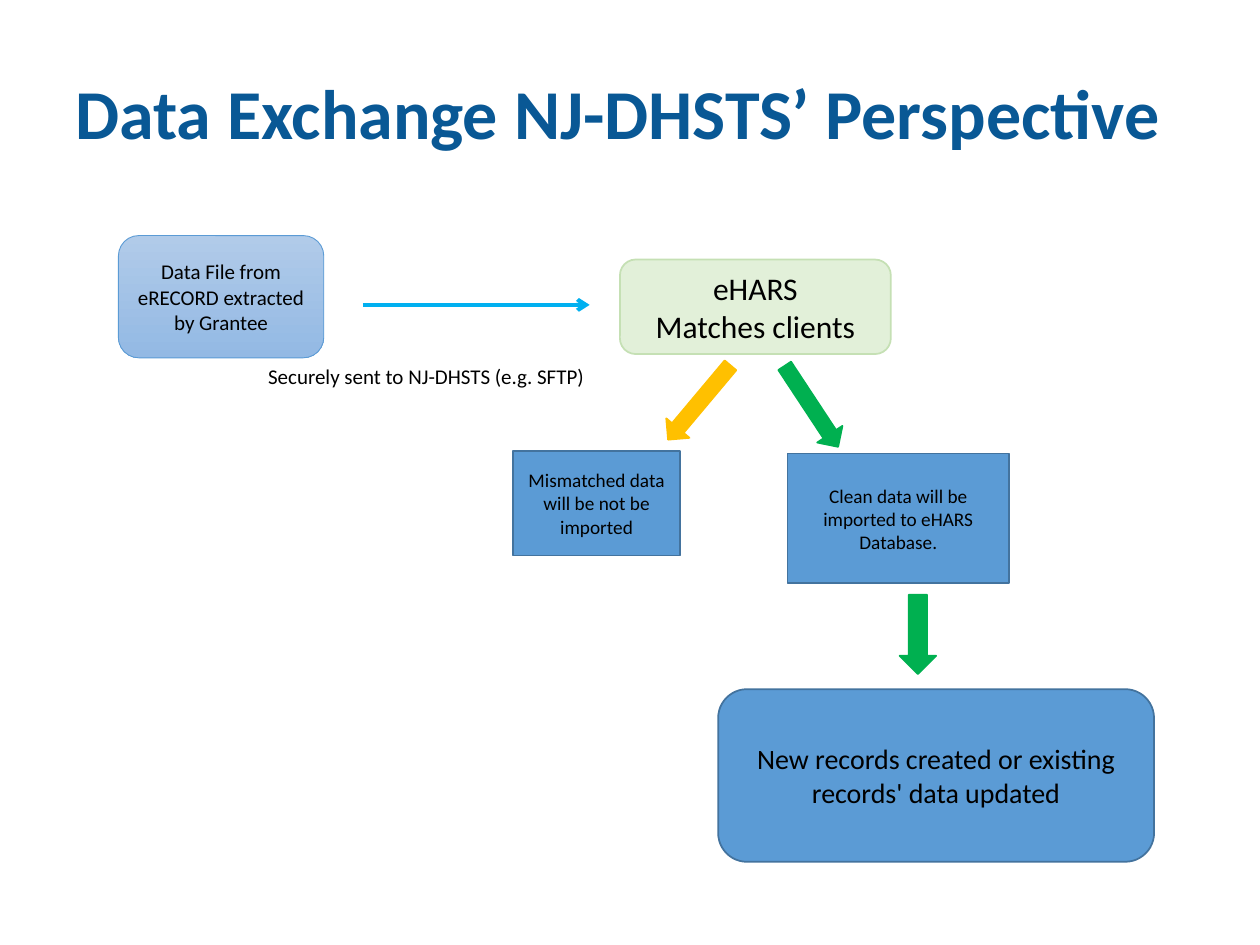
from lxml import etree
from pptx import Presentation
from pptx.dml.color import RGBColor
from pptx.enum import shapes, text
from pptx.oxml.ns import qn
from pptx.util import Inches, Pt

NAVY = RGBColor(0x09, 0x58, 0x95)
BLACK = RGBColor(0, 0, 0)
BLUE = RGBColor(0x5B, 0x9B, 0xD5)
BLUE_EDGE = RGBColor(0x43, 0x73, 0x9E)
PALE_TOP = RGBColor(0xB1, 0xCB, 0xE9)
PALE_BOTTOM = RGBColor(0x93, 0xB9, 0xE4)
MINT = RGBColor(0xE2, 0xF0, 0xD9)
MINT_EDGE = RGBColor(0xC5, 0xE0, 0xB4)
SKY = RGBColor(0x00, 0xB0, 0xF0)
AMBER = RGBColor(0xFF, 0xC0, 0x00)
GREEN = RGBColor(0x00, 0xB0, 0x50)

MSO = shapes.MSO_SHAPE
ALIGN = text.PP_ALIGN


def write(sp, lines, size, color=BLACK, bold=False, align=ALIGN.CENTER,
          anchor=text.MSO_ANCHOR.MIDDLE, wrap=True):
    tf = sp.text_frame
    tf.word_wrap = wrap
    tf.vertical_anchor = anchor
    for i, line in enumerate(lines):
        p = tf.add_paragraph() if i else tf.paragraphs[0]
        p.alignment = align
        r = p.add_run()
        r.text = line
        r.font.name = "Calibri"
        r.font.size = Pt(size)
        r.font.bold = bold
        r.font.color.rgb = color


def add_block(kind, box, fill, edge, width=1):
    sp = s.shapes.add_shape(kind, *map(Inches, box))
    sp.shadow.inherit = False
    sp.fill.solid()
    sp.fill.fore_color.rgb = fill
    sp.line.color.rgb = edge
    sp.line.width = Pt(width)
    return sp


prs = Presentation()
prs.slide_width, prs.slide_height = Inches(10), Inches(7.5)
s = prs.slides.add_slide(prs.slide_layouts[6])

title = s.shapes.add_textbox(Inches(0.5), Inches(0.3), Inches(9), Inches(1.25))
write(title, ["Data Exchange NJ-DHSTS’ Perspective"], 40, NAVY, True, ALIGN.LEFT)
title.text_frame.paragraphs[0].line_spacing = 0.9

# Process steps
steps = [
    (MSO.ROUNDED_RECTANGLE, (0.94, 1.87, 1.63, 0.97), PALE_TOP, BLUE, 0.5,
     ["Data File from eRECORD extracted by Grantee"], 12),
    (MSO.ROUNDED_RECTANGLE, (4.92, 2.06, 2.15, 0.75), MINT, MINT_EDGE, 1,
     ["eHARS", "Matches clients"], 18),
    (MSO.RECTANGLE, (4.07, 3.58, 1.33, 0.83), BLUE, BLUE_EDGE, 1,
     ["Mismatched data will be not be imported"], 11),
    (MSO.RECTANGLE, (6.25, 3.6, 1.76, 1.03), BLUE, BLUE_EDGE, 1,
     ["Clean data will be imported to eHARS Database."], 11),
    (MSO.ROUNDED_RECTANGLE, (5.7, 5.47, 3.46, 1.37), BLUE, BLUE_EDGE, 1,
     ["New records created or existing records' data updated"], 16),
]
blocks = []
for kind, box, fill, edge, width, lines, size in steps:
    sp = add_block(kind, box, fill, edge, width)
    write(sp, lines, size)
    blocks.append(sp)

data_file = blocks[0]
data_file.fill.gradient()
data_file.fill.gradient_angle = 270
for stop, color in zip(data_file.fill.gradient_stops, (PALE_TOP, PALE_BOTTOM)):
    stop.color.rgb = color

# Secure transfer
transfer = s.shapes.add_connector(shapes.MSO_CONNECTOR.STRAIGHT, Inches(2.88),
                                  Inches(2.42), Inches(4.68), Inches(2.42))
transfer.line.color.rgb = SKY
transfer.line.width = Pt(2.25)
etree.SubElement(transfer.line._get_or_add_ln(), qn("a:tailEnd"), type="arrow")
etree.SubElement(transfer._element.spPr, qn("a:effectLst"))

label = s.shapes.add_textbox(Inches(2.03), Inches(2.84), Inches(2.74), Inches(0.3))
write(label, ["Securely sent to NJ-DHSTS (e.g. SFTP)"], 12, align=ALIGN.LEFT,
      anchor=text.MSO_ANCHOR.TOP, wrap=False)

# Block arrows between steps
for kind, box, color, angle in [
    (MSO.DOWN_ARROW, (5.43, 2.81, 0.24, 0.77), AMBER, 40),
    (MSO.DOWN_ARROW, (6.32, 2.84, 0.24, 0.77), GREEN, 326.6),
    (MSO.RIGHT_ARROW, (6.97, 4.89, 0.63, 0.29), GREEN, 90),
]:
    add_block(kind, box, color, color).rotation = angle

prs.save("out.pptx")
